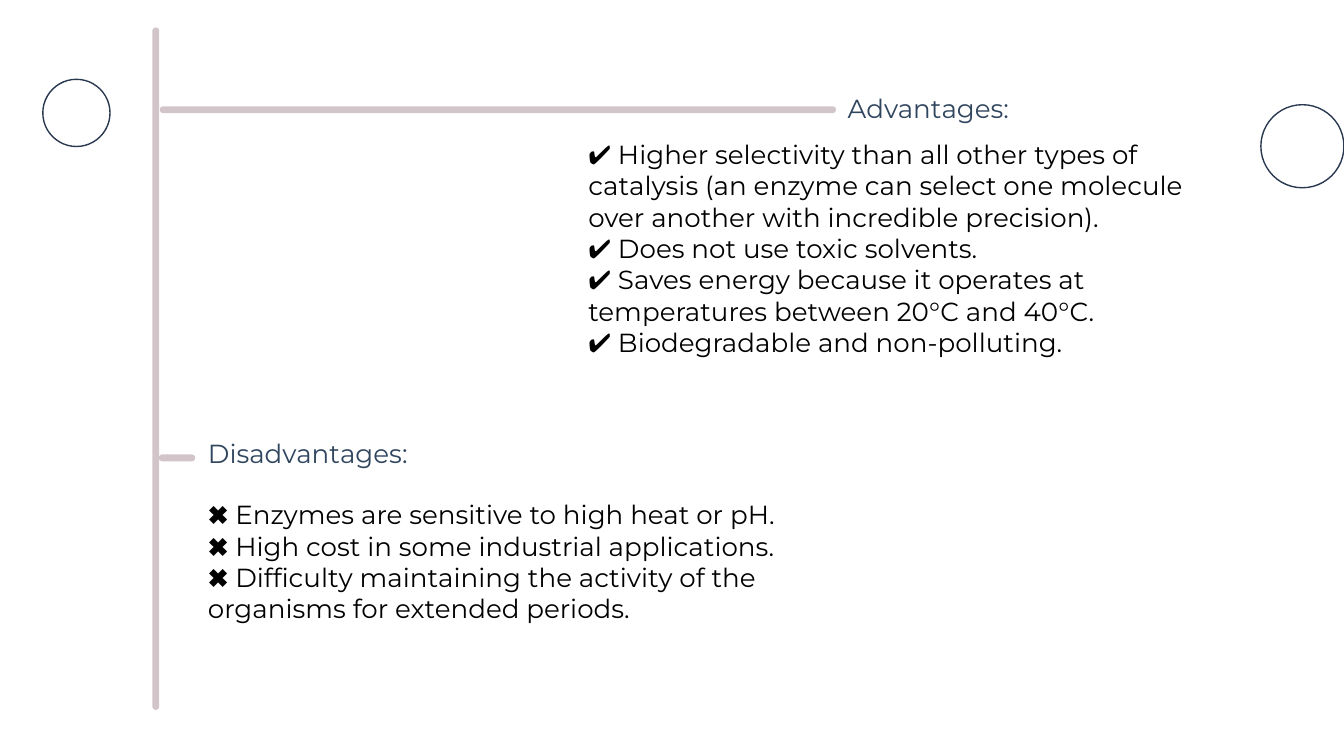
from pptx import Presentation
from pptx.dml.color import RGBColor
from pptx.enum.shapes import MSO_SHAPE
from pptx.enum.text import MSO_AUTO_SIZE
from pptx.util import Cm, Pt

# Content: lines of text, place (left, top, width, height in cm), format
NAVY, ROSE, BLACK, INK = "30455E", "D2C5C9", "000000", "28384F"
TEXTS = [
    (["Advantages:"], (15.77, 1.63, 3.56, 0.86), dict(color=NAVY, wrap=False)),
    (["Disadvantages:"], (3.68, 8.15, 4.29, 0.86), dict(color=NAVY, wrap=False)),
    (["✔ Higher selectivity than all other types of catalysis (an enzyme "
      "can select one molecule over another with incredible precision).",
      "✔ Does not use toxic solvents.",
      "✔ Saves energy because it operates at temperatures between 20°C and 40°C.",
      "✔ Biodegradable and non-polluting."],
     (10.87, 2.49, 12.7, 4.45), {}),
    (["✖ Enzymes are sensitive to high heat or pH.",
      "✖ High cost in some industrial applications.",
      "✖ Difficulty maintaining the activity of the organisms for extended periods."],
     (3.68, 9.3, 12.7, 2.64), {}),
]
THICK = 0.13
BARS = [
    (2.88, 0.52, THICK, 12.9),   # trunk
    (3.02, 2.01, 12.78, THICK),  # branch to advantages
    (3.0, 8.59, 0.69, THICK),    # branch to disadvantages
]
RINGS = [(0.81, 1.5, 1.27), (23.83, 1.98, 1.57)]  # left, top, size

deck = Presentation()
deck.slide_width, deck.slide_height = Cm(25.4), Cm(14.29)
slide = deck.slides.add_slide(deck.slide_layouts[6])


def tint(code):
    return RGBColor.from_string(code)


def add_shape(kind, place, fill=None, line=None):
    shape = slide.shapes.add_shape(kind, *map(Cm, place))
    shape.shadow.inherit = False
    if fill:
        shape.fill.solid()
        shape.fill.fore_color.rgb = tint(fill)
    else:
        shape.fill.background()
    if line:
        shape.line.color.rgb = tint(line)
        shape.line.width = Pt(0.75)
    else:
        shape.line.fill.background()
    return shape


def add_text(lines, place, color=BLACK, size=14, font="Montserrat", wrap=True):
    frame = slide.shapes.add_textbox(*map(Cm, place)).text_frame
    frame.word_wrap = wrap
    frame.auto_size = MSO_AUTO_SIZE.SHAPE_TO_FIT_TEXT
    for i, line in enumerate(lines):
        para = frame.add_paragraph() if i else frame.paragraphs[0]
        run = para.add_run()
        run.text = line
        run.font.name, run.font.size = font, Pt(size)
        run.font.color.rgb = tint(color)


# Rings at the edges
for left, top, size in RINGS:
    add_shape(MSO_SHAPE.OVAL, (left, top, size, size), line=INK)

# Trunk and branches
for place in BARS:
    bar = add_shape(MSO_SHAPE.ROUNDED_RECTANGLE, place, fill=ROSE)
    bar.adjustments[0] = 0.5

# Headings and lists
for lines, place, style in TEXTS:
    add_text(lines, place, **style)

deck.save("out.pptx")
